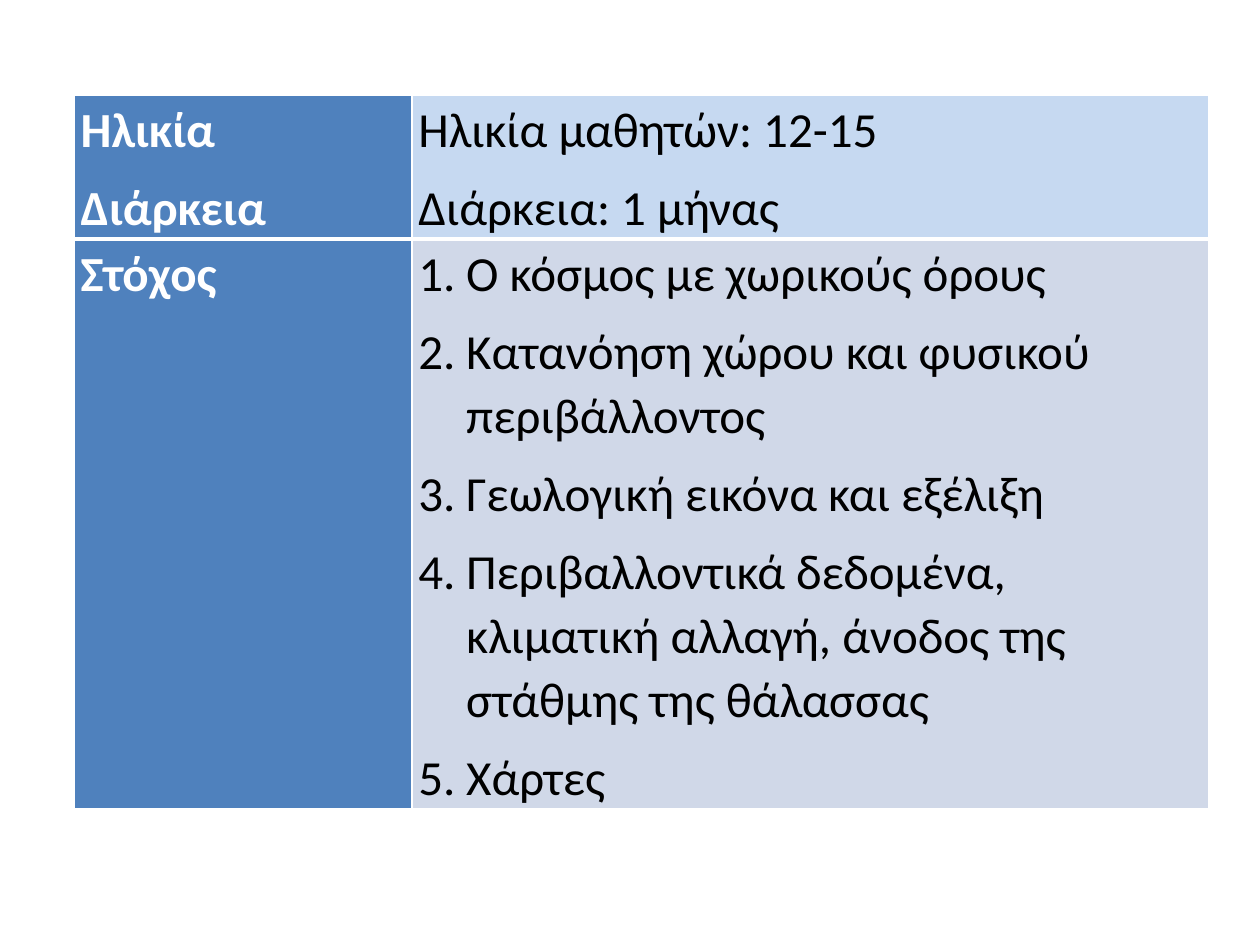
from lxml import etree
from pptx import Presentation, util as u
from pptx.dml.color import RGBColor
from pptx.oxml.ns import qn

COLORS = {"white": "FFFFFF", "black": "000000", "head": "4F81BD",
          "top": "C6D9F1", "goal": "D0D8E8"}

# Each row: height, label lines, detail lines, detail fill, numbered, bottom border
ROWS = [
    (0.85, ["Ηλικία", "Διάρκεια"],
     ["Ηλικία μαθητών: 12-15", "Διάρκεια: 1 μήνας"], "top", False, 3),
    (2.6, ["Στόχος"],
     ["Ο κόσμος με χωρικούς όρους",
      "Κατανόηση χώρου και φυσικού περιβάλλοντος",
      "Γεωλογική εικόνα και εξέλιξη",
      "Περιβαλλοντικά δεδομένα, κλιματική αλλαγή, άνοδος της στάθμης της θάλασσας",
      "Χάρτες"], "goal", True, 1),
]


def color(name):
    return RGBColor.from_string(COLORS[name])


def add_borders(cell, bottom):
    props = cell._tc.get_or_add_tcPr()
    for side, width in (("L", 1), ("R", 1), ("T", 1), ("B", bottom)):
        line = etree.SubElement(props, qn(f"a:ln{side}"), w=str(u.Pt(width)))
        fill = etree.SubElement(line, qn("a:solidFill"))
        etree.SubElement(fill, qn("a:srgbClr"), val=COLORS["white"])


def add_number(para):
    props = para._p.get_or_add_pPr()
    props.set("marL", str(u.Inches(0.38)))
    props.set("indent", str(u.Inches(-0.38)))
    etree.SubElement(props, qn("a:buFont"), typeface="+mj-lt")
    etree.SubElement(props, qn("a:buAutoNum"), type="arabicPeriod")
    tabs = etree.SubElement(props, qn("a:tabLst"))
    etree.SubElement(tabs, qn("a:tab"), pos=str(u.Inches(0.5)), algn="l")


def fill_cell(cell, lines, back, ink, bold, numbered, bottom):
    add_borders(cell, bottom)
    cell.fill.solid()
    cell.fill.fore_color.rgb = color(back)
    cell.margin_left = cell.margin_right = u.Inches(0.05)
    cell.margin_top, cell.margin_bottom = u.Inches(0.01), u.Inches(0)
    frame = cell.text_frame
    frame.text = "\n".join(lines)
    for para in frame.paragraphs:
        para.line_spacing = 1.07
        para.space_after = u.Pt(8)
        if numbered:
            add_number(para)
        font = para.font
        font.name, font.size, font.bold = "Calibri", u.Pt(28), bold
        font.color.rgb = color(ink)


def add_plan(slide, left, top, width, height):
    frame = slide.shapes.add_table(len(ROWS), 2, left, top, width, height)
    table = frame.table
    table.columns[0].width = u.Inches(2.68)
    table.columns[1].width = width - u.Inches(2.68)
    for i, (tall, label, detail, back, numbered, bottom) in enumerate(ROWS):
        table.rows[i].height = u.Inches(tall)
        fill_cell(table.cell(i, 0), label, "head", "white", True, False, bottom)
        fill_cell(table.cell(i, 1), detail, back, "black", False, numbered, bottom)
    # Rows grow with their text, so the frame is taller than their minimum
    frame.height = height


def main():
    deck = Presentation()
    deck.slide_width, deck.slide_height = u.Inches(10), u.Inches(7.5)
    slide = deck.slides.add_slide(deck.slide_layouts[6])
    add_plan(slide, u.Inches(0.59), u.Inches(0.76), u.Inches(9), u.Inches(5.57))
    deck.save("out.pptx")


if __name__ == "__main__":
    main()
